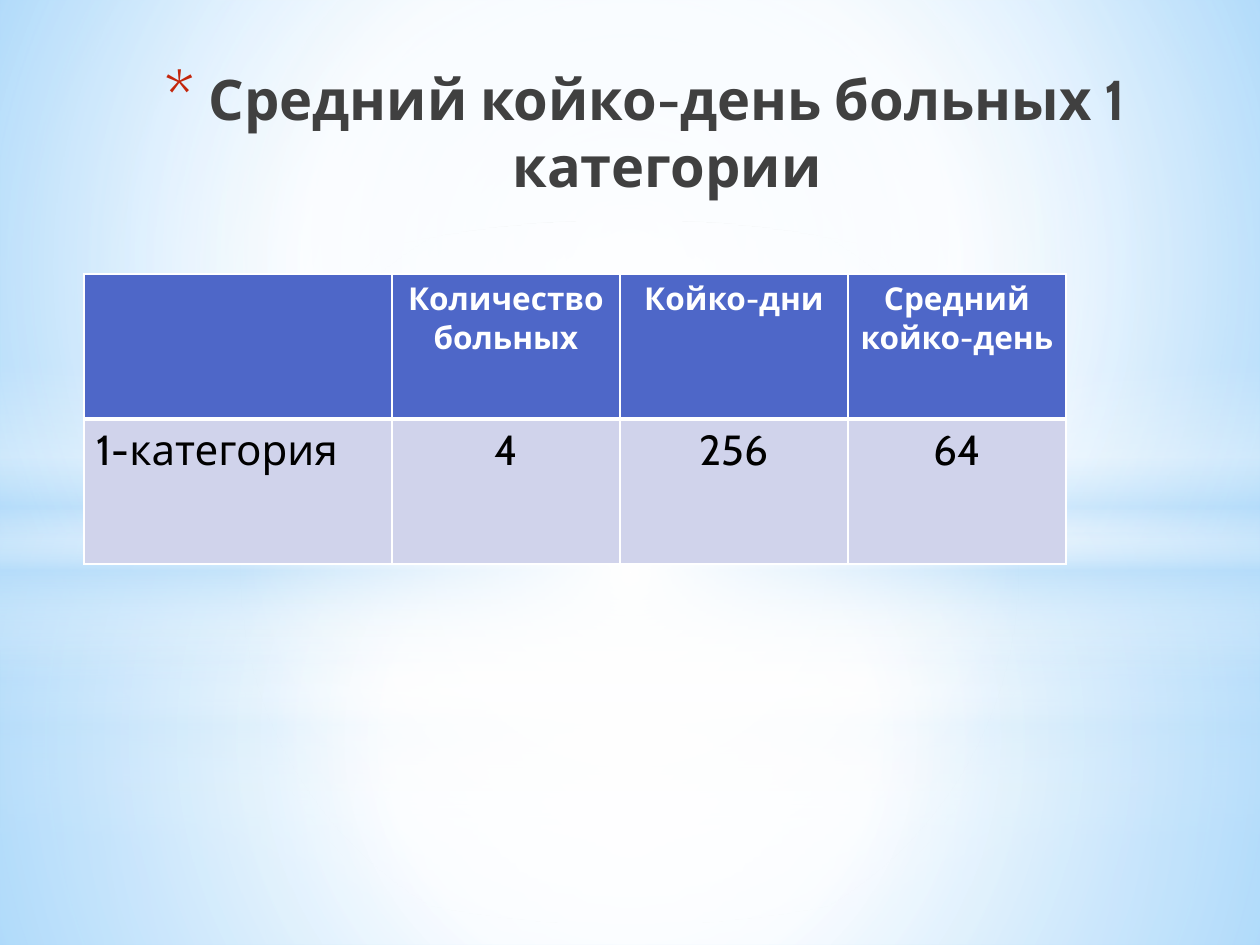
"""Build the slide on the average bed-days of category 1 patients."""
from lxml.etree import SubElement
from pptx import Presentation
from pptx.dml.color import RGBColor
from pptx.enum.shapes import MSO_SHAPE
from pptx.enum.text import MSO_ANCHOR, MSO_AUTO_SIZE, PP_ALIGN
from pptx.oxml import parse_xml
from pptx.oxml.ns import nsdecls, qn
from pptx.util import Emu, Pt

SCALE = 914400 / 126
WHITE = RGBColor(0xFF, 0xFF, 0xFF)
BLACK = RGBColor(0x00, 0x00, 0x00)
GREY = RGBColor(0x40, 0x40, 0x40)
RED = RGBColor(0xC3, 0x26, 0x0C)
BLUE = RGBColor(0x4E, 0x67, 0xC8)
LILAC = RGBColor(0xD0, 0xD3, 0xEB)
SKY = RGBColor(0xB4, 0xDC, 0xFA)
PALE = RGBColor(0x9E, 0xD5, 0xFF)
DEEP = RGBColor(0x5B, 0xB9, 0xFF)
MID = (50, 50, 50, 50)


def px(count):
    return Emu(round(count * SCALE))


def shade(owner, stops, focus):
    owner.fill.solid()
    root = owner._element if hasattr(owner, "_element") else owner._cSld
    solid = root.find(".//" + qn("a:solidFill"))
    marks = "".join(
        f'<a:gs pos="{pos * 1000}"><a:srgbClr val="{tint}">'
        f'<a:alpha val="{alpha * 1000}"/></a:srgbClr></a:gs>'
        for pos, tint, alpha in stops)
    if focus:
        sides = " ".join(f'{side}="{part * 1000}"' for side, part in zip("ltrb", focus))
        form = f'<a:path path="circle"><a:fillToRect {sides}/></a:path>'
    else:
        form = '<a:lin ang="5400000" scaled="0"/>'
    solid.getparent().replace(solid, parse_xml(
        f'<a:gradFill {nsdecls("a")} rotWithShape="1">'
        f'<a:gsLst>{marks}</a:gsLst>{form}</a:gradFill>'))


deck = Presentation()
deck.slide_width, deck.slide_height = px(1260), px(945)
slide = deck.slides.add_slide(deck.slide_layouts[5])
shade(slide.background, [(0, PALE, 100), (60, WHITE, 100), (100, DEEP, 100)],
      (20, 10, 20, 60))

band = [(0, WHITE, 0), (29, WHITE, 30), (45, SKY, 40),
        (55, WHITE, 26), (65, SKY, 60), (100, WHITE, 0)]
for split, top, gain, edge in ((703, 519, 0, 56), (533, 365, 1, 54)):
    floor = [(0, WHITE, 91 + gain), (37, WHITE, 76 + gain), (100, SKY, 79 + gain)]
    wall = [(0, WHITE, 89 + gain), (48, WHITE, 62 + gain), (100, SKY, 79 + gain)]
    glow = [(0, WHITE, 100), (edge, WHITE, 0)]
    for kind, y, high, stops, focus in (
            (MSO_SHAPE.RECTANGLE, split, 945 - split, floor, MID),
            (MSO_SHAPE.RECTANGLE, 0, split, wall, MID),
            (MSO_SHAPE.RECTANGLE, top, 315, band, None),
            (MSO_SHAPE.OVAL, 221, 703, glow, MID)):
        layer = slide.shapes.add_shape(kind, 0, px(y), px(1260), px(high))
        layer.shadow.inherit = False
        layer.line.fill.background()
        shade(layer, stops, focus)

title = slide.shapes.title
slide.shapes._spTree.append(title._element)
place = {"left": 74, "top": 16, "width": 1142, "height": 189}
for name, value in place.items():
    setattr(title, name, px(value))
frame = title.text_frame
frame.text = "Средний койко-день больных 1 категории"
style = {"word_wrap": True, "auto_size": MSO_AUTO_SIZE.NONE,
         "vertical_anchor": MSO_ANCHOR.BOTTOM}
for name, value in style.items():
    setattr(frame, name, value)
head = frame.paragraphs[0]
head.alignment = PP_ALIGN.CENTER
font = head.runs[0].font
for name, value in {"name": "Cabin", "size": Pt(32), "bold": True}.items():
    setattr(font, name, value)
font.color.rgb = GREY
props = head._p.get_or_add_pPr()
props.set("marL", str(px(44)))
props.set("indent", str(-px(44)))
tone = SubElement(props, qn("a:buClr"))
SubElement(tone, qn("a:srgbClr"), val=str(RED))
SubElement(props, qn("a:buSzPct"), val="128000")
SubElement(props, qn("a:buFont"), typeface="Cabin")
SubElement(props, qn("a:buChar"), char="*")

rows = [["", "Количество больных", "Койко-дни", "Средний койко-день"],
        ["1-категория", "4", "256", "64"]]
looks = [{"size": Pt(18), "bold": True, "name": "Cabin"},
         {"size": Pt(24), "bold": False, "name": "Cabin"}]
table = slide.shapes.add_table(2, 4, px(84), px(274), px(982), px(290)).table
for column, wide in zip(table.columns, (308, 228, 228, 218)):
    column.width = px(wide)
for r, (row, look, fill, ink) in enumerate(
        zip(rows, looks, (BLUE, LILAC), (WHITE, BLACK))):
    table.rows[r].height = px(145)
    for c, text in enumerate(row):
        cell = table.cell(r, c)
        cell.text = text
        line = cell.text_frame.paragraphs[0]
        line.alignment = PP_ALIGN.LEFT if c == 0 else PP_ALIGN.CENTER
        for name, value in look.items():
            setattr(line.font, name, value)
        line.font.color.rgb = ink
        for side in "LRTB":
            thick = 3 if (r, side) in ((0, "B"), (1, "T")) else 1
            rule = SubElement(cell._tc.get_or_add_tcPr(), qn(f"a:ln{side}"),
                              w=str(Pt(thick)))
            paint = SubElement(rule, qn("a:solidFill"))
            SubElement(paint, qn("a:srgbClr"), val=str(WHITE))
        cell.fill.solid()
        cell.fill.fore_color.rgb = fill

deck.save("out.pptx")
